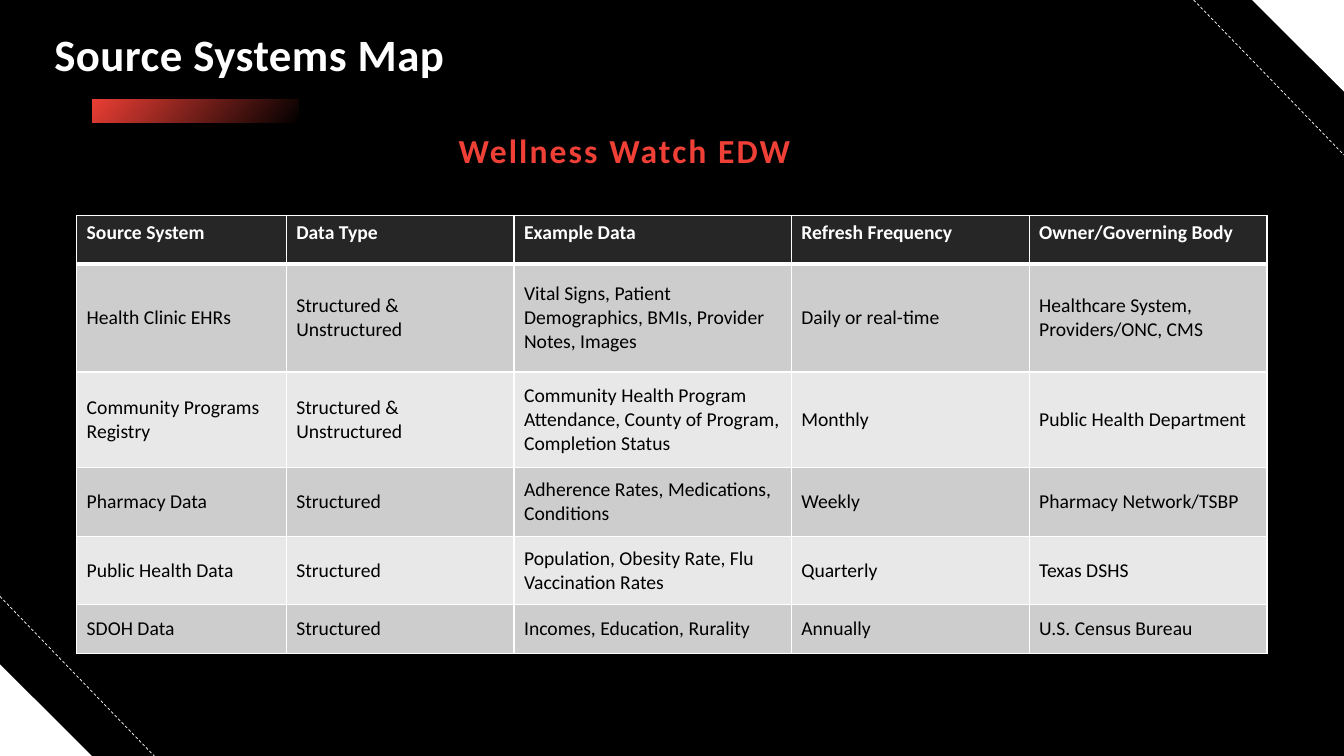
from lxml.etree import SubElement
from pptx import Presentation
from pptx.dml.color import RGBColor
from pptx.enum.dml import MSO_LINE
from pptx.enum.shapes import MSO_CONNECTOR, MSO_SHAPE
from pptx.enum.text import MSO_ANCHOR, PP_ALIGN
from pptx.oxml.ns import qn
from pptx.util import Inches, Pt

WHITE, BLACK, RED = "FFFFFF", "000000", "EE4036"
HEAD, BANDS = "252625", ("CDCDCD", "E8E8E8")
FONT = "Calibri"

COLS = (15.6, 16.95, 20.63, 17.7, 17.7)
ROWS = (6.4, 14.27, 12.67, 9.07, 9.07, 6.4)
SOURCES = (
    ("Source System", "Data Type", "Example Data", "Refresh Frequency",
     "Owner/Governing Body"),
    ("Health Clinic EHRs", "Structured & Unstructured",
     "Vital Signs, Patient Demographics, BMIs, Provider Notes, Images",
     "Daily or real-time", "Healthcare System, Providers/ONC, CMS"),
    ("Community Programs Registry", "Structured & Unstructured",
     "Community Health Program Attendance, County of Program, Completion Status",
     "Monthly", "Public Health Department"),
    ("Pharmacy Data", "Structured", "Adherence Rates, Medications, Conditions",
     "Weekly", "Pharmacy Network/TSBP"),
    ("Public Health Data", "Structured",
     "Population, Obesity Rate, Flu Vaccination Rates",
     "Quarterly", "Texas DSHS"),
    ("SDOH Data", "Structured", "Incomes, Education, Rurality",
     "Annually", "U.S. Census Bureau"),
)


def paint(text):
    return RGBColor.from_string(text)


class Board:
    """Draws on one slide; lengths are percentages of its width and height."""

    def __init__(self, deck, back):
        self.wide, self.high = deck.slide_width, deck.slide_height
        self.slide = deck.slides.add_slide(deck.slide_layouts[6])
        self.shapes = self.slide.shapes
        self.slide.background.fill.solid()
        self.slide.background.fill.fore_color.rgb = paint(back)

    def x(self, share):
        return round(self.wide * share / 100)

    def y(self, share):
        return round(self.high * share / 100)

    def box(self, left, top, width, height):
        return self.x(left), self.y(top), self.x(width), self.y(height)

    def style(self, para, size, color, bold):
        for run in para.runs:
            run.font.name, run.font.size, run.font.bold = FONT, Pt(size), bold
            run.font.color.rgb = paint(color)

    def shape(self, kind, *place):
        shape = self.shapes.add_shape(kind, *self.box(*place))
        shape.shadow.inherit = False
        shape.line.fill.background()
        return shape

    def corner(self, left, top, turn=0):
        shape = self.shape(MSO_SHAPE.RIGHT_TRIANGLE, left, top, 6.83, 12.13)
        shape.rotation = turn
        shape.fill.solid()
        shape.fill.fore_color.rgb = paint(WHITE)

    def fade(self, color, *place):
        """Bar that runs from a full colour to clear."""
        bar = self.shape(MSO_SHAPE.RECTANGLE, *place)
        bar.fill.gradient()
        bar.fill.gradient_angle = 320
        for stop in bar.fill.gradient_stops:
            stop.color.rgb = paint(color)
        last = list(bar._element.spPr.iter(qn("a:srgbClr")))[-1]
        SubElement(last, qn("a:alpha"), val="0")

    def dash(self, left, top, right, bottom):
        line = self.shapes.add_connector(
            MSO_CONNECTOR.STRAIGHT,
            self.x(left), self.y(top), self.x(right), self.y(bottom))
        line.line.color.rgb = paint(WHITE)
        line.line.width = Pt(0.5)
        line.line.dash_style = MSO_LINE.DASH
        SubElement(line._element.spPr, qn("a:effectLst"))

    def text(self, words, place, size, color, space, align):
        frame = self.shapes.add_textbox(*self.box(*place)).text_frame
        frame.word_wrap = True
        frame.vertical_anchor = MSO_ANCHOR.MIDDLE
        frame.text = words
        para = frame.paragraphs[0]
        para.alignment = align
        para.line_spacing = 0.9
        self.style(para, size, color, True)
        for run in para.runs:
            run.font._element.set("spc", str(round(space * 100)))

    def edge(self, cell, **widths):
        """Draw white cell borders; call before filling the cell."""
        props = cell._tc.get_or_add_tcPr()
        for side, width in widths.items():
            line = SubElement(props, qn("a:ln" + side), w=str(Pt(width)))
            fill = SubElement(line, qn("a:solidFill"))
            SubElement(fill, qn("a:srgbClr"), val=WHITE)

    def table(self, data, left, top, cols, rows):
        place = self.box(left, top, sum(cols), sum(rows))
        table = self.shapes.add_table(len(rows), len(cols), *place).table
        for col, share in zip(table.columns, cols):
            col.width = self.x(share)
        for r, (row, share) in enumerate(zip(table.rows, rows)):
            row.height = self.y(share)
            head = r == 0
            for cell, words in zip(row.cells, data[r]):
                cell.text = words
                cell.vertical_anchor = MSO_ANCHOR.TOP if head else MSO_ANCHOR.MIDDLE
                self.edge(cell, L=1, R=1, T=3 if r == 1 else 1, B=3 if head else 1)
                cell.fill.solid()
                cell.fill.fore_color.rgb = paint(HEAD if head else BANDS[(r - 1) % 2])
                self.style(cell.text_frame.paragraphs[0], 14,
                           WHITE if head else BLACK, head)


def main():
    deck = Presentation()
    deck.slide_width, deck.slide_height = Inches(13.33), Inches(7.5)
    board = Board(deck, BLACK)
    board.corner(0, 87.87)
    board.corner(93.17, 0, 180)
    board.fade(RED, 6.9, 13.1, 15.3, 3.07)
    board.dash(0, 78.9, 11.48, 100)
    board.dash(88.82, 0, 100, 20.5)
    board.text("Source Systems Map", (3.3, 3.33, 86.35, 8.53),
               32, WHITE, 0.3, PP_ALIGN.LEFT)
    board.text("Wellness Watch EDW", (28.28, 17.47, 36.38, 5.33),
               24, RED, 1.5, PP_ALIGN.CENTER)
    board.table(SOURCES, 5.7, 28.53, COLS, ROWS)
    deck.save("out.pptx")


if __name__ == "__main__":
    main()
